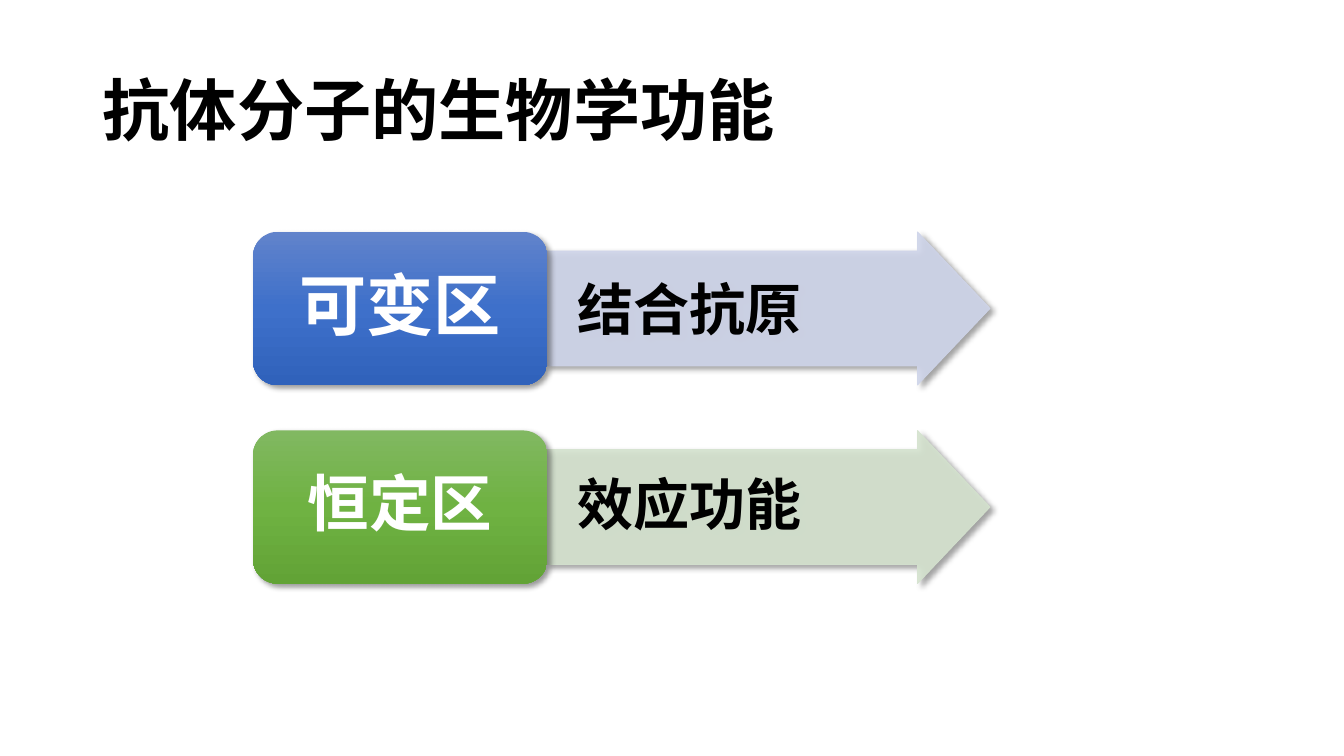
"""Build a slide on the biological functions of antibody molecules."""
from copy import deepcopy
from pptx import Presentation
from pptx.dml.color import RGBColor as Rgb
from pptx.enum.shapes import MSO_SHAPE as Kind
from pptx.enum.text import MSO_ANCHOR as Anchor, PP_ALIGN as Align
from pptx.oxml.ns import qn
from pptx.oxml.xmlchemy import OxmlElement as Elem
from pptx.util import Inches, Pt

THEME = {
    "font": "Noto Sans CJK SC",
    "dark": "000000",
    "light": "FFFFFF",
    "title": 48,
    "role": 40,
    "rows": [
        {"name": "可变区", "size": 48, "role": "结合抗原", "space": 1.0,
         "tint": "CFD5EA", "fade": ("6183CB", "3E70CA", "3062BB")},
        {"name": "恒定区", "size": 44, "role": "效应功能", "space": 0.9,
         "tint": "D5E3CF", "fade": ("81B861", "6FB242", "62A336")},
    ],
}


def write(shape, text, size, color, align, space, side):
    frame = shape.text_frame
    form = {"word_wrap": True, "vertical_anchor": Anchor.MIDDLE,
            "margin_left": Inches(side), "margin_right": Inches(0.1),
            "margin_top": 0, "margin_bottom": 0}
    if align == Align.CENTER:
        form["margin_right"] = Inches(side)
    for key, value in form.items():
        setattr(frame, key, value)
    para = frame.paragraphs[0]
    para.alignment, para.line_spacing = align, space
    run = para.add_run()
    run.text = text
    for key, value in {"name": THEME["font"], "size": Pt(size), "bold": True}.items():
        setattr(run.font, key, value)
    run.font.color.rgb = Rgb.from_string(color)
    east = Elem("a:ea")
    east.set("typeface", THEME["font"])
    run.font._element.find(qn("a:latin")).addnext(east)


def add_alpha(color, value):
    alpha = Elem("a:alpha")
    alpha.set("val", str(value * 1000))
    color.append(alpha)


deck = Presentation()
deck.slide_width, deck.slide_height = Inches(13.33), Inches(7.5)
slide = deck.slides.add_slide(deck.slide_layouts[6])
shapes = slide.shapes

title = shapes.add_textbox(Inches(0.92), Inches(0.4), Inches(11.5), Inches(1.45))
write(title, "抗体分子的生物学功能", THEME["title"], THEME["dark"], Align.LEFT, 0.9, 0.1)

left, top, wide, high, step = 2.51, 2.3, 2.92, 1.52, 1.97
for i, row in enumerate(THEME["rows"]):
    y = Inches(top + i * step)
    arrow = shapes.add_shape(Kind.RIGHT_ARROW, Inches(left + wide), y, Inches(4.39), Inches(high))
    arrow.adjustments[0], arrow.adjustments[1] = 0.75, 0.72 / high
    tint = Rgb.from_string(row["tint"])
    arrow.fill.solid()
    arrow.fill.fore_color.rgb = tint
    arrow.line.color.rgb = tint
    arrow.line.width = Pt(0.5)
    for color in arrow._element.spPr.iter(qn("a:srgbClr")):
        add_alpha(color, 90)
    write(arrow, row["role"], THEME["role"], THEME["dark"], Align.LEFT, row["space"], 0.3)

    box = shapes.add_shape(Kind.ROUNDED_RECTANGLE, Inches(left), y, Inches(wide), Inches(high))
    box.adjustments[0] = 0.16
    box.line.fill.background()
    box.fill.gradient()
    box.fill.gradient_angle = 270
    stops = box._element.spPr.find(".//" + qn("a:gsLst"))
    stops.append(deepcopy(stops[0]))
    for j, (stop, color) in enumerate(zip(box.fill.gradient_stops, row["fade"])):
        stop.position = j / 2
        stop.color.rgb = Rgb.from_string(color)
    write(box, row["name"], row["size"], THEME["light"], Align.CENTER, 0.9, 0.25)

    for shape in (arrow, box):
        shape.shadow.inherit = False
        shade = Elem("a:outerShdw")
        for key, value in {"blurRad": Pt(4), "dist": Pt(3), "dir": 45 * 60000}.items():
            shade.set(key, str(int(value)))
        black = Elem("a:srgbClr")
        black.set("val", THEME["dark"])
        add_alpha(black, 40)
        shade.append(black)
        shape._element.spPr.find(qn("a:effectLst")).append(shade)

deck.save("out.pptx")
